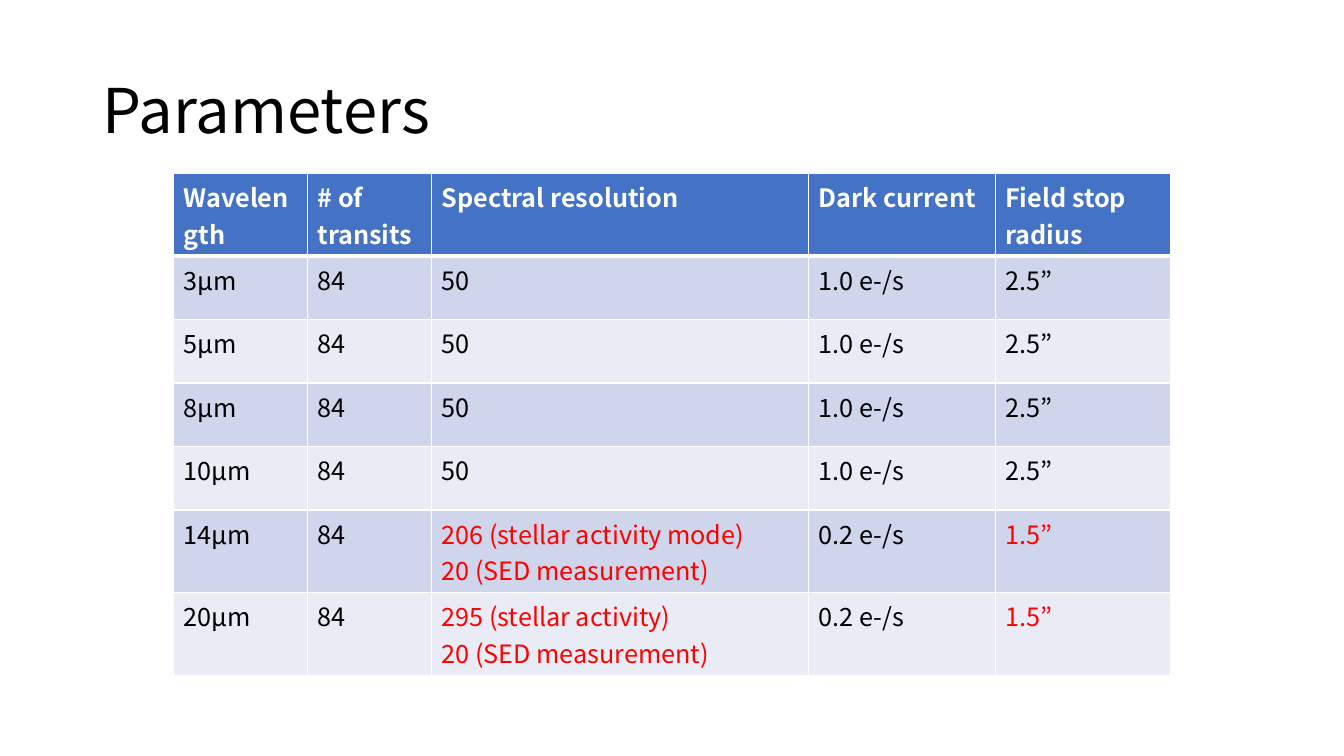
from dataclasses import dataclass

from lxml.etree import SubElement
from pptx import Presentation
from pptx.dml.color import RGBColor
from pptx.enum.text import MSO_ANCHOR
from pptx.oxml import parse_xml
from pptx.oxml.ns import nsdecls, qn
from pptx.table import _Cell as Cell
from pptx.text.text import TextFrame
from pptx.util import Inches, Pt

FONT = "Noto Sans CJK JP"
BLACK = RGBColor(0x00, 0x00, 0x00)
WHITE = RGBColor(0xFF, 0xFF, 0xFF)
RED = RGBColor(0xFF, 0x00, 0x00)
HEADER_BLUE = RGBColor(0x44, 0x72, 0xC4)
BANDS = (RGBColor(0xCF, 0xD5, 0xEA), RGBColor(0xE9, 0xEB, 0xF5))

HEADERS = ("Wavelength", "# of transits", "Spectral resolution",
           "Dark current", "Field stop radius")
COL_WIDTHS = (1.33, 1.23, 3.74, 1.85, 1.74)
ONE_LINE_HEIGHT = 0.63
TWO_LINE_HEIGHT = 0.82
RED_COLUMNS = (2, 4)


@dataclass
class Band:
    wavelength: str
    resolution: str = "50"
    dark_current: str = "1.0 e-/s"
    radius: str = "2.5”"
    transits: str = "84"
    highlighted: bool = False

    def values(self) -> tuple[str, ...]:
        return (self.wavelength, self.transits, self.resolution,
                self.dark_current, self.radius)

    def height(self) -> float:
        return TWO_LINE_HEIGHT if "\n" in self.resolution else ONE_LINE_HEIGHT


BAND_ROWS = (
    Band("3µm"),
    Band("5µm"),
    Band("8µm"),
    Band("10µm"),
    Band("14µm", "206 (stellar activity mode)\n20 (SED measurement)",
         "0.2 e-/s", "1.5”", highlighted=True),
    Band("20µm", "295 (stellar activity)\n20 (SED measurement)",
         "0.2 e-/s", "1.5”", highlighted=True),
)


def write(tf: TextFrame, text: str, size: float, color: RGBColor, bold: bool = False) -> None:
    tf.text = text
    for p in tf.paragraphs:
        for r in p.runs:
            r.font.name = FONT
            r.font.size = Pt(size)
            r.font.bold = bold
            r.font.color.rgb = color
            SubElement(r.font._element, qn("a:ea")).set("typeface", FONT)


def set_borders(cell: Cell, top: float, bottom: float) -> None:
    tc_pr = cell._tc.get_or_add_tcPr()
    widths = {"lnL": 1, "lnR": 1, "lnT": top, "lnB": bottom}
    for i, (side, width) in enumerate(widths.items()):
        tc_pr.insert(i, parse_xml(
            f'<a:{side} {nsdecls("a")} w="{Pt(width)}"><a:solidFill>'
            f'<a:srgbClr val="{WHITE}"/></a:solidFill></a:{side}>'))


def fill_cell(cell: Cell, text: str, fill: RGBColor, color: RGBColor, row: int) -> None:
    write(cell.text_frame, text, 18, color, bold=row == 0)
    cell.fill.solid()
    cell.fill.fore_color.rgb = fill
    set_borders(cell, top=3 if row == 1 else 1, bottom=3 if row == 0 else 1)


def main() -> None:
    prs = Presentation()
    prs.slide_width, prs.slide_height = Inches(13.33), Inches(7.5)
    s = prs.slides.add_slide(prs.slide_layouts[6])

    tf = s.shapes.add_textbox(Inches(0.92), Inches(0.4), Inches(11.5), Inches(1.45)).text_frame
    tf.word_wrap = True
    tf.vertical_anchor = MSO_ANCHOR.MIDDLE
    write(tf, "Parameters", 44, BLACK)
    tf.paragraphs[0].line_spacing = 0.9

    heights = [TWO_LINE_HEIGHT] + [band.height() for band in BAND_ROWS]
    table = s.shapes.add_table(
        len(heights), len(HEADERS), Inches(1.72), Inches(1.72),
        Inches(sum(COL_WIDTHS)), Inches(sum(heights))).table
    for column, width in zip(table.columns, COL_WIDTHS):
        column.width = Inches(width)
    for row, height in zip(table.rows, heights):
        row.height = Inches(height)

    for c, header in enumerate(HEADERS):
        fill_cell(table.cell(0, c), header, HEADER_BLUE, WHITE, 0)
    for i, band in enumerate(BAND_ROWS, start=1):
        for c, value in enumerate(band.values()):
            color = RED if band.highlighted and c in RED_COLUMNS else BLACK
            fill_cell(table.cell(i, c), value, BANDS[(i - 1) % 2], color, i)

    prs.save("out.pptx")


if __name__ == "__main__":
    main()
